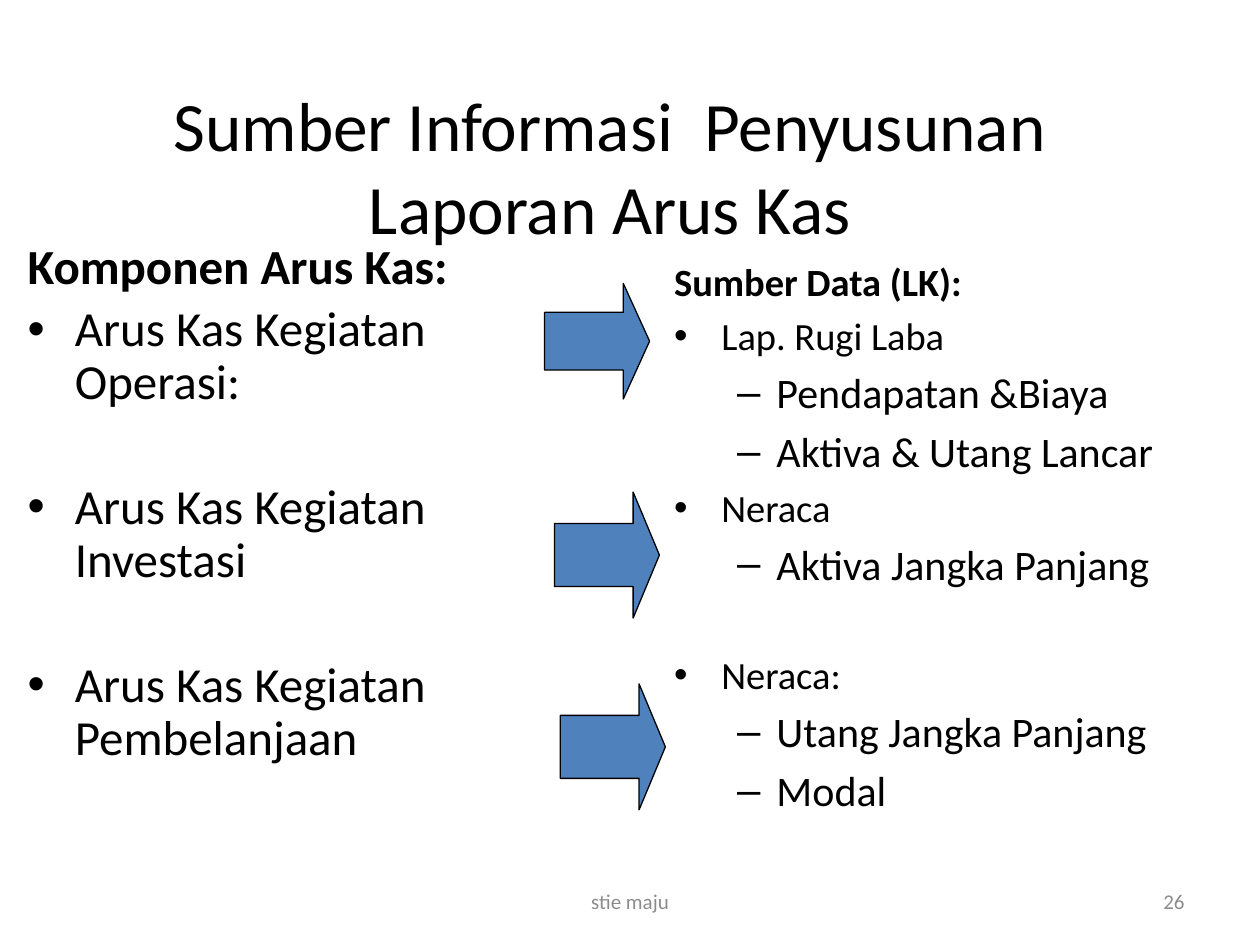
import pptx
import pptx.util
import pptx.oxml
from pptx.dml.color import RGBColor
from pptx.enum.shapes import MSO_SHAPE
from pptx.enum.text import MSO_ANCHOR, MSO_AUTO_SIZE, PP_ALIGN

Pt = pptx.util.Pt
BLACK = RGBColor(0x00, 0x00, 0x00)
GRAY = RGBColor(0x8C, 0x8C, 0x8C)
BLUE = RGBColor(0x4F, 0x81, 0xBD)
FONT = "Calibri"

TITLE = "Sumber Informasi  Penyusunan Laporan Arus Kas"
TITLE_BOX = (25.2, 43.2, 646.6, 102.2)

# Each list: heading, then (level, text, space before or None for the template's)
COLUMNS = [
    {"box": (8.6, 134.6, 317.5, 329.8), "sizes": (28,), "spacing": 0.9,
     "heading": "Komponen Arus Kas:",
     "items": [(0, "Arus Kas Kegiatan Operasi:", None),
               (0, "Arus Kas Kegiatan Investasi", 41),
               (0, "Arus Kas Kegiatan Pembelanjaan", 41)]},
    {"box": (378, 144, 322.6, 347.8), "sizes": (22, 24), "spacing": 1.0,
     "heading": "Sumber Data (LK):",
     "items": [(0, "Lap. Rugi Laba", None),
               (1, "Pendapatan &Biaya", None),
               (1, "Aktiva & Utang Lancar", None),
               (0, "Neraca", None),
               (1, "Aktiva Jangka Panjang", None),
               (0, "Neraca:", 35.7),
               (1, "Utang Jangka Panjang", None),
               (1, "Modal", None)]},
]

ARROW_WIDTH = 60
ARROWS = [(311.2, 162, 66), (316.8, 281.2, 72), (320.2, 390.8, 72)]  # left, top, height

FOOTERS = [("stie maju", (246, 500.4, 228.2, 28.8), PP_ALIGN.CENTER),
           ("26", (516, 500.4, 168, 28.8), PP_ALIGN.RIGHT)]


def place(shape, box):
    for name, value in zip(("left", "top", "width", "height"), box):
        setattr(shape, name, Pt(value))


def write(p, text, size, color=BLACK, bold=False):
    r = p.add_run()
    r.text = text
    for name, value in {"name": FONT, "size": Pt(size), "bold": bold}.items():
        setattr(r.font, name, value)
    r.font.color.rgb = color


def set_frame(tf, anchor):
    for name, value in {"word_wrap": True, "auto_size": MSO_AUTO_SIZE.NONE,
                        "vertical_anchor": anchor}.items():
        setattr(tf, name, value)


def fill_column(sp, column):
    place(sp, column["box"])
    tf = sp.text_frame
    set_frame(tf, MSO_ANCHOR.TOP)
    heading = tf.paragraphs[0]
    heading.line_spacing = column["spacing"]
    pptx.oxml.ns.qn("a:buNone")
    heading._p.get_or_add_pPr().append(pptx.oxml.parse_xml(
        '<a:buNone xmlns:a="http://schemas.openxmlformats.org/drawingml/2006/main"/>'))
    write(heading, column["heading"], column["sizes"][0], bold=True)
    for level, text, before in column["items"]:
        p = tf.add_paragraph()
        p.level = level
        p.line_spacing = column["spacing"]
        if before is not None:
            p.space_before = Pt(before)
        write(p, text, column["sizes"][level])


def add_arrow(s, left, top, height):
    sp = s.shapes.add_shape(MSO_SHAPE.RIGHT_ARROW, Pt(left), Pt(top),
                            Pt(ARROW_WIDTH), Pt(height))
    sp.adjustments[0], sp.adjustments[1] = 0.5, 0.25
    sp.shadow.inherit = False
    sp.fill.solid()
    sp.fill.fore_color.rgb = BLUE
    sp.line.color.rgb = BLACK
    sp.line.width = Pt(0.75)


def add_footer(s, text, box, align):
    tf = s.shapes.add_textbox(*map(Pt, box)).text_frame
    set_frame(tf, MSO_ANCHOR.MIDDLE)
    tf.paragraphs[0].alignment = align
    write(tf.paragraphs[0], text, 12, GRAY)


def main():
    prs = pptx.Presentation()
    prs.slide_width, prs.slide_height = Pt(720), Pt(540)
    s = prs.slides.add_slide(prs.slide_layouts[3])  # title and two lists

    title = s.shapes.title
    place(title, TITLE_BOX)
    set_frame(title.text_frame, MSO_ANCHOR.MIDDLE)
    title.text_frame.paragraphs[0].alignment = PP_ALIGN.CENTER
    write(title.text_frame.paragraphs[0], TITLE, 39.6)

    for idx, column in enumerate(COLUMNS, start=1):
        fill_column(s.placeholders[idx], column)
    for arrow in ARROWS:
        add_arrow(s, *arrow)
    for footer in FOOTERS:
        add_footer(s, *footer)
    prs.save("out.pptx")


if __name__ == "__main__":
    main()
